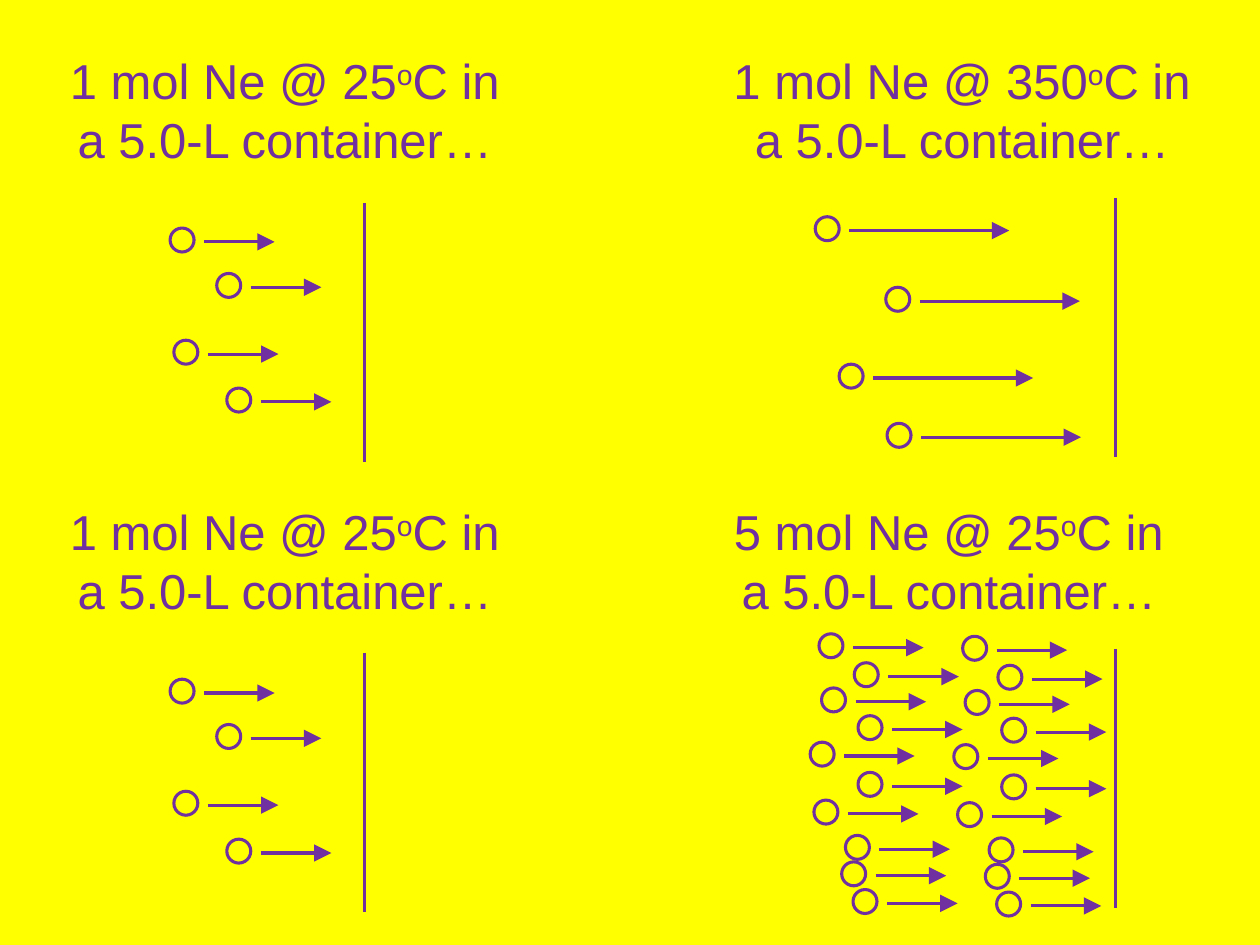
from lxml import etree
from pptx import Presentation
from pptx.dml.color import RGBColor
from pptx.enum import shapes, text
from pptx.oxml.ns import qn
from pptx.util import Inches, Pt

YELLOW = RGBColor(0xFF, 0xFF, 0x00)
PURPLE = RGBColor(0x70, 0x30, 0xA0)
ATOM_SIZE = 0.19
WALL_HEIGHT = 2.06

prs = Presentation()
prs.slide_width, prs.slide_height = Inches(10), Inches(7.5)
slide = prs.slides.add_slide(prs.slide_layouts[6])
slide.background.fill.solid()
slide.background.fill.fore_color.rgb = YELLOW


def add_run(paragraph, wording, size=28, font="Arial", color=PURPLE, baseline=None):
    run = paragraph.add_run()
    run.text = wording
    run.font.size = Pt(size)
    run.font.name = font
    run.font.color.rgb = color
    if baseline:
        run.font._element.set("baseline", str(baseline * 1000))


def add_stroke(group, x1, y1, x2, y2, arrow=False):
    stroke = group.shapes.add_connector(
        shapes.MSO_CONNECTOR.STRAIGHT, Inches(x1), Inches(y1), Inches(x2), Inches(y2))
    stroke.line.color.rgb = PURPLE
    stroke.line.width = Pt(1.75)
    if arrow:
        etree.SubElement(stroke.line._get_or_add_ln(), qn("a:tailEnd"),
                         type="triangle", w="lg", len="lg")
    etree.SubElement(stroke._element.spPr, qn("a:effectLst"))


cool_atoms = [(1.38, 2.7), (1.72, 2.17), (1.35, 1.81), (1.8, 3.08)]
lower_cool_atoms = [(x, y + 3.58) for x, y in cool_atoms]
hot_atoms = [(7.03, 2.28), (6.47, 1.72), (6.66, 2.89), (7.04, 3.36)]
left_crowd = [(6.46, 6.35), (6.81, 6.13), (6.43, 5.89), (6.71, 6.63), (6.78, 5.26),
              (6.81, 5.68), (6.52, 5.46), (6.5, 5.03), (6.77, 7.06), (6.68, 6.84)]
right_crowd = [(x + 1.14, y + 0.02) for x, y in left_crowd]

containers = [
    ("1 mol Ne @ 25", 0.46, 0.35, 3.68, 2.89, 1.61, 0.56, cool_atoms),
    ("1 mol Ne @ 350", 5.73, 0.35, 3.89, 8.85, 1.57, 1.27, hot_atoms),
    ("1 mol Ne @ 25", 0.46, 3.93, 3.68, 2.89, 5.18, 0.56, lower_cool_atoms),
    ("5 mol Ne @ 25", 5.73, 3.93, 3.68, 8.85, 5.15, 0.56, right_crowd + left_crowd),
]

for amount, left, top, width, wall_x, wall_y, speed, atoms in containers:
    caption = slide.shapes.add_textbox(
        Inches(left), Inches(top), Inches(width), Inches(1.04)).text_frame
    caption.word_wrap = False
    caption.vertical_anchor = text.MSO_ANCHOR.MIDDLE
    caption.auto_size = text.MSO_AUTO_SIZE.SHAPE_TO_FIT_TEXT
    caption.margin_left, caption.margin_right = Inches(0.06), Inches(0.14)
    condition, volume = caption.paragraphs[0], caption.add_paragraph()
    condition.alignment = volume.alignment = text.PP_ALIGN.CENTER
    add_run(condition, amount)
    add_run(condition, "o", baseline=30)
    add_run(condition, "C in")
    add_run(volume, "a 5.0-L container…")

    gas = slide.shapes.add_group_shape()
    add_stroke(gas, wall_x, wall_y, wall_x, wall_y + WALL_HEIGHT)
    for x, y in atoms:
        add_stroke(gas, x + 0.27, y + 0.11, x + 0.27 + speed, y + 0.11, arrow=True)
        atom = gas.shapes.add_shape(
            shapes.MSO_SHAPE.OVAL, Inches(x), Inches(y), Inches(ATOM_SIZE), Inches(ATOM_SIZE))
        atom.shadow.inherit = False
        atom.fill.background()
        atom.line.color.rgb = PURPLE
        atom.line.width = Pt(1.75)

prs.save("out.pptx")
